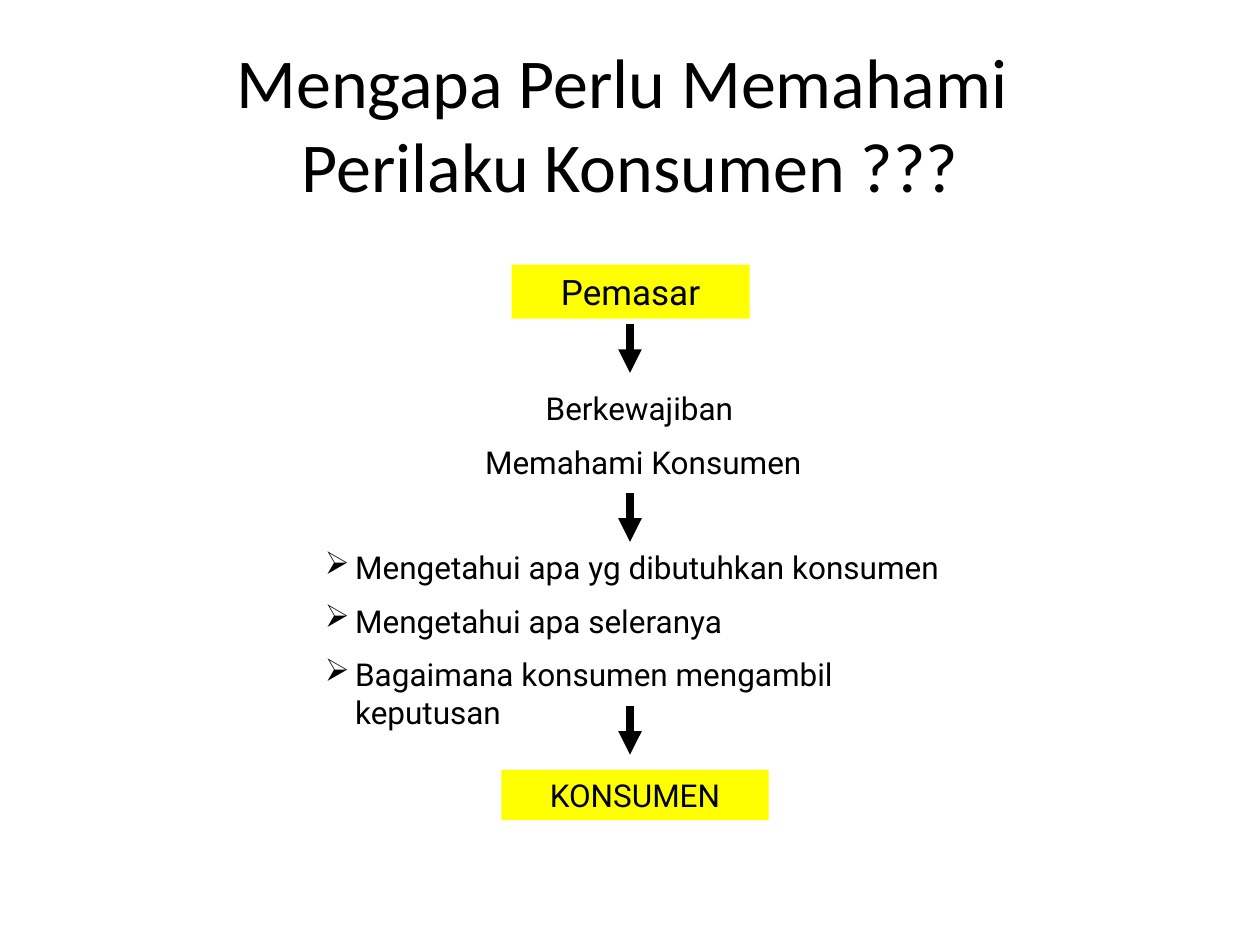
from lxml import etree
from pptx import Presentation
from pptx.dml.color import RGBColor
from pptx.enum.shapes import MSO_CONNECTOR, MSO_SHAPE
from pptx.enum.text import MSO_ANCHOR, PP_ALIGN
from pptx.oxml.ns import qn
from pptx.util import Inches, Pt

BLACK = RGBColor(0x00, 0x00, 0x00)
YELLOW = RGBColor(0xFF, 0xFF, 0x00)
RECTANGLE = MSO_SHAPE.RECTANGLE
STRAIGHT = MSO_CONNECTOR.STRAIGHT
TOP, MIDDLE = MSO_ANCHOR.TOP, MSO_ANCHOR.MIDDLE
LEFT, CENTER = PP_ALIGN.LEFT, PP_ALIGN.CENTER
TITLE_FONT, BODY_FONT = "Calibri", "Roboto"
BULLET_INDENT = Inches(0.24)
ARROW_X, ARROW_LENGTH = 5, 0.39


class FlowSlide:
    """Draws the elements of a vertical flow on one slide in a shared style."""

    def __init__(self, slide):
        self.slide = slide

    def set_text(self, shape, lines, size, font=BODY_FONT, align=CENTER, anchor=TOP):
        frame = shape.text_frame
        frame.word_wrap = True
        frame.vertical_anchor = anchor
        frame.text = "\n".join(lines)
        for index, paragraph in enumerate(frame.paragraphs):
            paragraph.alignment = align
            paragraph.space_before = Pt(size / 2 if index else 0)
            paragraph.font.name = font
            paragraph.font.size = Pt(size)
            paragraph.font.color.rgb = BLACK
        return frame

    def text(self, box, lines, size=18, **style):
        shape = self.slide.shapes.add_textbox(*map(Inches, box))
        return self.set_text(shape, lines, size, **style)

    def bullets(self, box, lines):
        for paragraph in self.text(box, lines, align=LEFT).paragraphs:
            properties = paragraph._p.get_or_add_pPr()
            properties.set("marL", str(BULLET_INDENT))
            properties.set("indent", str(-BULLET_INDENT))
            etree.SubElement(properties, qn("a:buChar")).set("char", "➢")
            properties.append(properties.find(qn("a:defRPr")))

    def label(self, box, line, size):
        shape = self.slide.shapes.add_shape(RECTANGLE, *map(Inches, box))
        shape.shadow.inherit = False
        shape.fill.solid()
        shape.fill.fore_color.rgb = YELLOW
        shape.line.fill.background()
        self.set_text(shape, [line], size)

    def down_arrow(self, top):
        x = Inches(ARROW_X)
        connector = self.slide.shapes.add_connector(
            STRAIGHT, x, Inches(top), x, Inches(top + ARROW_LENGTH))
        connector.line.color.rgb = BLACK
        connector.line.width = Pt(4.5)
        properties = connector._element.spPr
        line = properties.find(qn("a:ln"))
        etree.SubElement(line, qn("a:tailEnd")).set("type", "triangle")
        etree.SubElement(properties, qn("a:effectLst"))


def main():
    presentation = Presentation()
    presentation.slide_width = Inches(10)
    presentation.slide_height = Inches(7.5)
    flow = FlowSlide(presentation.slides.add_slide(presentation.slide_layouts[6]))

    flow.text((0.5, 0.25, 9, 1.45), ["Mengapa Perlu Memahami \vPerilaku Konsumen ???"],
              size=40, font=TITLE_FONT, anchor=MIDDLE)
    flow.label((4.06, 2.1, 1.89, 0.43), "Pemasar", 20)
    flow.text((3.5, 3.04, 3.15, 0.85), ["Berkewajiban", " Memahami Konsumen"])
    flow.bullets((2.48, 4.3, 5.35, 1.3), [
        "Mengetahui apa yg dibutuhkan konsumen",
        "Mengetahui apa seleranya",
        "Bagaimana konsumen mengambil keputusan",
    ])
    flow.label((3.98, 6.11, 2.12, 0.4), "KONSUMEN", 18)
    for top in (2.57, 3.91, 5.6):
        flow.down_arrow(top)

    presentation.save("out.pptx")


if __name__ == "__main__":
    main()
